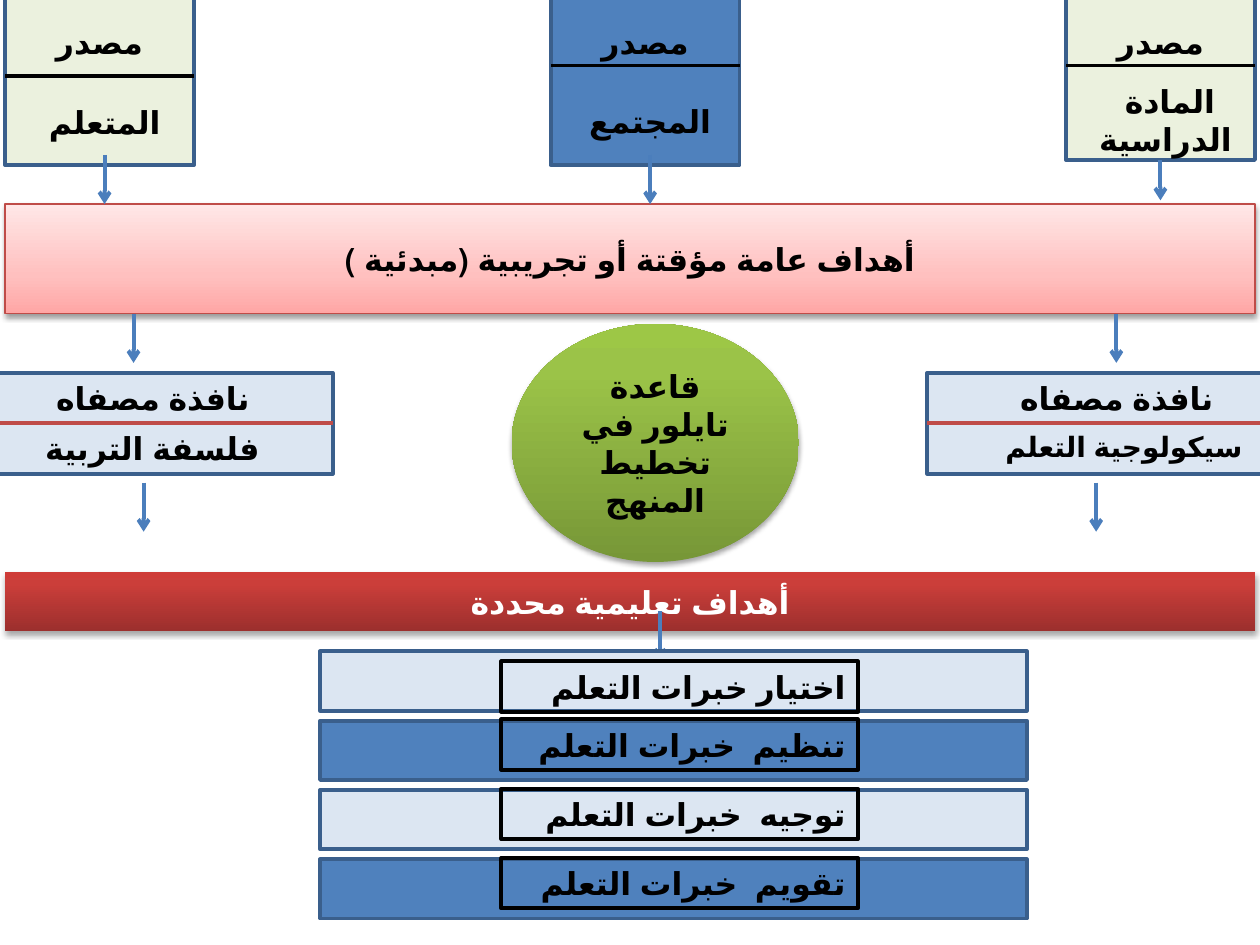
from lxml.etree import SubElement
from pptx import Presentation
from pptx.dml.color import RGBColor
from pptx.enum.lang import MSO_LANGUAGE_ID as Lang
from pptx.enum.shapes import MSO_CONNECTOR as Conn, MSO_SHAPE as Kind
from pptx.enum.text import MSO_ANCHOR as Anchor, PP_ALIGN as Align
from pptx.oxml.ns import qn
from pptx.util import Inches, Pt

COL = {
    "black": "000000", "white": "FFFFFF", "blue": "4F81BD", "pale": "DCE6F2",
    "cream": "EBF1DE", "edge": "3A5F8C", "arrow": "4B7EBC", "red": "BF4C48",
}
# Gradient stops run from the bottom up: (percent, colour)
PINK = [(0, "FFA6A5"), (35, "FFC0BF"), (100, "FFE7E7")]
CRIMSON = [(0, "9C2F2D"), (80, "CB3E3A"), (100, "CE3B37")]
GREEN = [(0, "779737"), (80, "9BC348"), (100, "9DC746")]

SOURCE = "مصدر"
# left, top, fill, divider y, name lines, name top, name height
SOURCES = [
    (8.46, -0.07, "cream", 0.52, ["المادة ", "الدراسية"], 0.6, 0.71),
    (4.37, -0.03, "blue", 0.52, ["المجتمع"], 0.76, 0.4),
    (0.04, -0.03, "cream", 0.6, ["المتعلم"], 0.77, 0.4),
]
FILTER = "نافذة مصفاه"
# left, title left, name, name left, name width, name height, size
FILTERS = [
    (7.36, 7.77, "سيكولوجية التعلم", 7.69, 2.27, 0.37, 16),
    (-0.04, 0.12, "فلسفة التربية", 0.2, 1.96, 0.4, 18),
]
GENERAL = "أهداف عامة مؤقتة أو تجريبية (مبدئية )"
SPECIFIC = "أهداف تعليمية محددة"
CENTRE = "قاعدة تايلور في تخطيط المنهج"
# text, text box top
STEPS = [
    ("اختيار خبرات التعلم", 5.25), ("تنظيم  خبرات التعلم", 5.71),
    ("توجيه  خبرات التعلم", 6.26), ("تقويم  خبرات التعلم", 6.81),
]
# x, top, bottom
ARROWS = [
    (5.16, 1.23, 1.62), (0.83, 1.23, 1.62), (1.06, 2.49, 2.88),
    (8.86, 2.49, 2.88), (8.7, 3.83, 4.22), (1.14, 3.83, 4.22),
    (5.24, 4.85, 5.25),
]

prs = Presentation()
prs.slide_width, prs.slide_height = Inches(10), Inches(7.5)
shapes = prs.slides.add_slide(prs.slide_layouts[6]).shapes


def rgb(name):
    return RGBColor.from_string(COL[name])


def write(shape, lines, align=Align.CENTER, size=18, color="black"):
    """Fill a shape with bold right-to-left paragraphs."""
    frame = shape.text_frame
    frame.word_wrap = True
    for i, line in enumerate(lines):
        para = frame.add_paragraph() if i else frame.paragraphs[0]
        para.alignment = align
        para._p.get_or_add_pPr().set("rtl", "1")
        run = para.add_run()
        run.text = line
        font = run.font
        font.size, font.bold, font.name = Pt(size), True, "Calibri"
        font.language_id = Lang.ARABIC
        font.color.rgb = rgb(color)


def label(box, lines, align=Align.CENTER, size=18):
    text = shapes.add_textbox(*map(Inches, box))
    write(text, lines, align, size)
    return text


def block(box, fill=None, edge="edge", width=2.25, kind=Kind.RECTANGLE):
    shape = shapes.add_shape(kind, *map(Inches, box))
    shape.shadow.inherit = False
    if fill:
        shape.fill.solid()
        shape.fill.fore_color.rgb = rgb(fill)
    if edge:
        shape.line.color.rgb = rgb(edge)
        shape.line.width = Pt(width)
    else:
        shape.line.fill.background()
    return shape


def glow(box, stops, text, alpha, dist, color="black", **style):
    """Add a gradient shape with a soft shadow below it."""
    shape = block(box, **style)
    shape.fill.gradient()
    shape.fill.gradient_angle = 90
    props = shape.element.spPr
    ramp = props.find(".//" + qn("a:gsLst"))
    ramp.clear()
    for pos, tone in stops:
        stop = SubElement(ramp, qn("a:gs"), pos=str(pos * 1000))
        SubElement(stop, qn("a:srgbClr"), val=tone)
    shade = SubElement(
        props.find(qn("a:effectLst")), qn("a:outerShdw"), blurRad=str(Pt(3.1)),
        dist=str(Pt(dist)), dir="5400000", rotWithShape="0")
    tone = SubElement(shade, qn("a:srgbClr"), val=COL["black"])
    SubElement(tone, qn("a:alpha"), val=str(alpha * 1000))
    shape.text_frame.vertical_anchor = Anchor.MIDDLE
    write(shape, [text], color=color)


def link(x1, y1, x2, y2, color, head=False):
    line = shapes.add_connector(Conn.STRAIGHT, *map(Inches, (x1, y1, x2, y2)))
    line.line.color.rgb = rgb(color)
    line.line.width = Pt(2.25)
    if head:
        SubElement(line.line._get_or_add_ln(), qn("a:tailEnd"), type="arrow")
    SubElement(line._element.spPr, qn("a:effectLst"))
    return line


# Sources
cards = []
for left, top, fill, mid, name, y, high in SOURCES:
    cards.append(block((left, top, 1.5, 1.34), fill))
    link(left + 1.5, mid, left, mid, "black")
    label((left, 0.13, 1.5, 0.4), [SOURCE])
    label((left + 0.16, y, 1.26, high), name)

glow((0.04, 1.62, 9.92, 0.87), PINK, GENERAL, 38, 1.6, edge="red", width=0.75)

# Filters
for left, x, name, name_x, wide, high, size in FILTERS:
    pane = block((left, 2.96, 2.68, 0.8), "pale")
    rule = link(left + 2.68, 3.36, left, 3.36, "red")
    rule.begin_connect(pane, 3)
    rule.end_connect(pane, 1)
    label((x, 2.96, 1.96, 0.4), [FILTER], Align.RIGHT)
    label((name_x, 3.36, wide, high), [name], Align.RIGHT, size)

glow((0.04, 4.54, 9.92, 0.47), CRIMSON, SPECIFIC, 35, 1.8, "white", edge=None)

# Arrows
link(9.21, 1.27, 9.21, 1.59, "arrow", True).begin_connect(cards[0], 2)
for x, top, bottom in ARROWS:
    link(x, top, x, bottom, "arrow", True)

# Steps
for i, (text, y) in enumerate(STEPS):
    block((2.54, 5.17 + 0.55 * i, 5.61, 0.47), ("pale", "blue")[i % 2])
    tag = label((3.98, y, 2.83, 0.4), [text], Align.RIGHT)
    tag.line.color.rgb = rgb("black")
    tag.line.width = Pt(2.25)

glow((4.06, 2.57, 2.28, 1.89), GREEN, CENTRE, 35, 1.8, edge=None, kind=Kind.OVAL)

prs.save("out.pptx")
